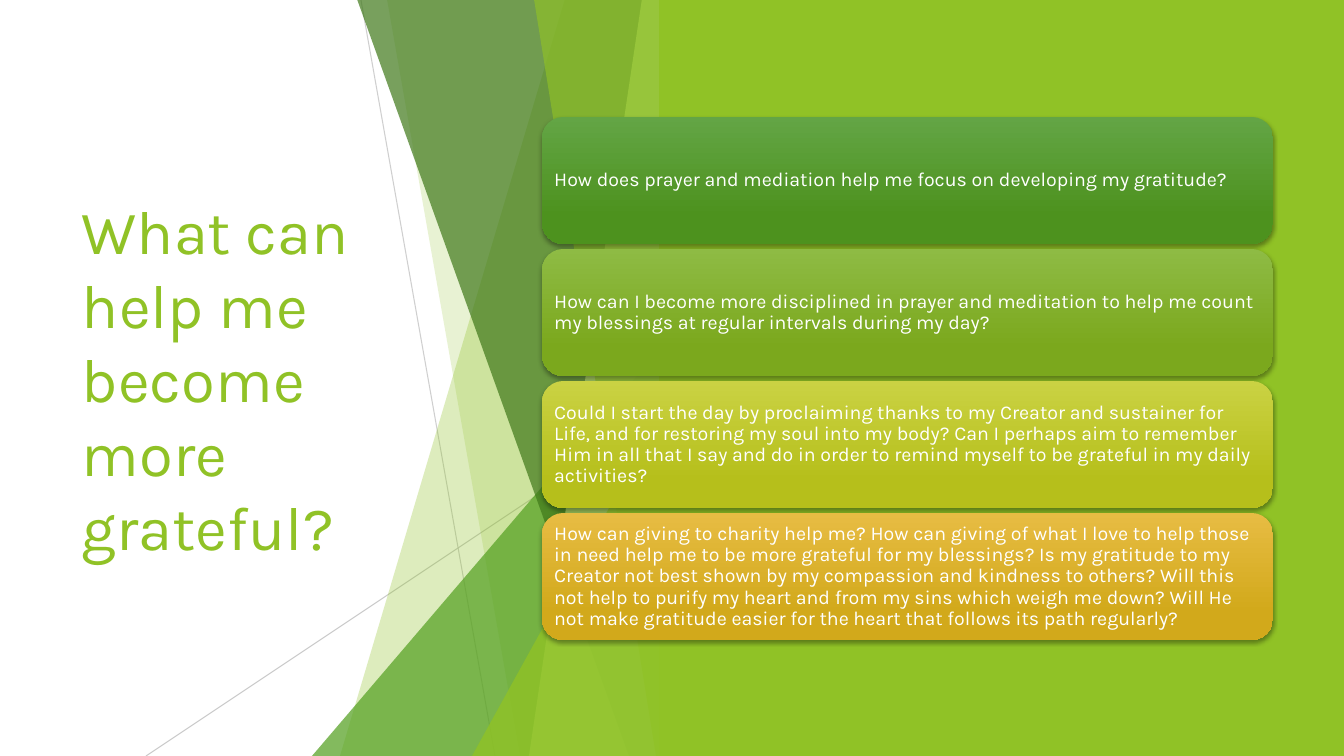
from dataclasses import dataclass
from typing import Any

from lxml.etree import SubElement
from pptx import Presentation
from pptx.dml.color import RGBColor
from pptx.enum.shapes import MSO_CONNECTOR as CONN, MSO_SHAPE as SHAPE
from pptx.enum.text import MSO_ANCHOR as ANCHOR, PP_ALIGN as ALIGN
from pptx.oxml.ns import qn
from pptx.util import Pt

WIDTH, HEIGHT = 1344, 756
SCALE = 12192000 / WIDTH
FACET_TOP, FACET_RIGHT = -1, 671
LIME, WHITE, GREY = "90C226", "FFFFFF", "BFBFBF"
FONT = "Karla"


@dataclass
class Ray:
    x1: int
    y1: int
    x2: int
    y2: int
    opacity: int


@dataclass
class Facet:
    """A band whose left edge slants from top_x to bottom_x."""
    top_x: int
    bottom_x: int
    color: str
    opacity: int


@dataclass
class Wedge:
    """A right triangle in the lower right corner of the facets."""
    left: int
    top: int
    color: str
    opacity: int


@dataclass
class Card:
    light: str
    dark: str
    text: str


RAYS = [Ray(361, 0, 495, HEIGHT, 75), Ray(FACET_RIGHT, 406, 146, HEIGHT, 80)]
LAYERS = [
    Facet(565, 340, LIME, 30),
    Facet(387, 520, LIME, 20),
    Wedge(312, 336, "54A021", 72),
    Facet(357, 629, "3F7819", 70),
    Facet(642, 529, "C0E474", 70),
    Facet(534, 656, LIME, 65),
    Wedge(472, 396, LIME, 80),
]
CARD_LEFT, CARD_TOP, CARD_WIDTH, CARD_HEIGHT, CARD_PITCH = 542, 117, 731, 127, 132
CARDS = [
    Card("63A545", "4D921E",
         "How does prayer and mediation help me focus on developing my gratitude?"),
    Card("8EBB44", "7BA81D",
         "How can I become more disciplined in prayer and meditation to help me count "
         "my blessings at regular intervals during my day?"),
    Card("CAD243", "B6BF1B",
         "Could I start the day by proclaiming thanks to my Creator and sustainer for "
         "Life, and for restoring my soul into my body? Can I perhaps aim to remember "
         "Him in all that I say and do in order to remind myself to be grateful in my "
         "daily activities?"),
    Card("E7BC43", "D2A91B",
         "How can giving to charity help me? How can giving of what I love to help those "
         "in need help me to be more grateful for my blessings? Is my gratitude to my "
         "Creator not best shown by my compassion and kindness to others? Will this "
         "not help to purify my heart and from my sins which weigh me down? Will He "
         "not make gratitude easier for the heart that follows its path regularly?"),
]


def px(*lengths: int) -> list[int]:
    return [round(n * SCALE) for n in lengths]


def rgb(color: str) -> RGBColor:
    return RGBColor.from_string(color)


def set_opacity(sp: Any, percent: int) -> None:
    color = sp._element.spPr.find(".//" + qn("a:srgbClr"))
    SubElement(color, qn("a:alpha"), val=str(percent * 1000))


def paint(sp: Any, color: str, opacity: int = 100) -> None:
    sp.shadow.inherit = False
    sp.line.fill.background()
    sp.fill.solid()
    sp.fill.fore_color.rgb = rgb(color)
    if opacity < 100:
        set_opacity(sp, opacity)


def write(sp: Any, text: str, size: int, color: str, spacing: float, **frame: Any) -> None:
    tf = sp.text_frame
    frame_format = {"word_wrap": True, "vertical_anchor": ANCHOR.MIDDLE, **frame}
    for name, value in frame_format.items():
        setattr(tf, name, value)
    p = tf.paragraphs[0]
    p.alignment, p.line_spacing = ALIGN.LEFT, spacing
    r = p.add_run()
    r.text = text
    for name, value in {"name": FONT, "size": Pt(size)}.items():
        setattr(r.font, name, value)
    r.font.color.rgb = rgb(color)


def draw_ray(shapes: Any, ray: Ray) -> None:
    line = shapes.add_connector(CONN.STRAIGHT, *px(ray.x1, ray.y1, ray.x2, ray.y2))
    line.line.width = Pt(0.75)
    line.line.color.rgb = rgb(GREY)
    set_opacity(line, ray.opacity)
    SubElement(line._element.spPr, qn("a:effectLst"))


def draw_layer(shapes: Any, layer: Facet | Wedge) -> None:
    if isinstance(layer, Facet):
        outline = shapes.build_freeform(layer.top_x, FACET_TOP, scale=SCALE)
        outline.add_line_segments([(FACET_RIGHT, FACET_TOP), (FACET_RIGHT, HEIGHT),
                                   (layer.bottom_x, HEIGHT)], close=True)
        sp = outline.convert_to_shape()
    else:
        sp = shapes.add_shape(SHAPE.ISOSCELES_TRIANGLE, *px(
            layer.left, layer.top, FACET_RIGHT - layer.left, HEIGHT - layer.top))
        sp.adjustments[0] = 1
    paint(sp, layer.color, layer.opacity)


def draw_card(shapes: Any, card: Card, top: int) -> None:
    sp = shapes.add_shape(SHAPE.ROUNDED_RECTANGLE,
                          *px(CARD_LEFT, top, CARD_WIDTH, CARD_HEIGHT))
    sp.line.fill.background()
    sp.fill.gradient()
    sp.fill.gradient_angle = 270
    stops = zip(sp.fill.gradient_stops, (0, 0.78), (card.light, card.dark))
    for stop, position, color in stops:
        stop.position = position
        stop.color.rgb = rgb(color)
    sp.shadow.inherit = False
    effects = sp._element.spPr.find(qn("a:effectLst"))
    shadow = SubElement(effects, qn("a:outerShdw"), blurRad=str(Pt(3)), dist=str(Pt(2)),
                        dir="5400000", algn="ctr", rotWithShape="0")
    black = SubElement(shadow, qn("a:srgbClr"), val="000000")
    SubElement(black, qn("a:alpha"), val="35000")
    inset = px(6)[0]
    margins = {f"margin_{side}": inset for side in ("left", "top", "right", "bottom")}
    write(sp, card.text, 14, WHITE, 0.9, **margins)


def main() -> None:
    prs = Presentation()
    prs.slide_width, prs.slide_height = px(WIDTH, HEIGHT)
    shapes = prs.slides.add_slide(prs.slide_layouts[6]).shapes

    title = shapes.add_textbox(*px(72, 152, 391, 452))
    write(title, "What can help me become more grateful?", 44, LIME, 1.0)

    backdrop = shapes.add_group_shape().shapes
    for ray in RAYS:
        draw_ray(backdrop, ray)
    for layer in LAYERS:
        draw_layer(backdrop, layer)

    panel = shapes.add_shape(SHAPE.RECTANGLE, *px(659, 0, WIDTH - 659, HEIGHT))
    paint(panel, LIME)
    for i, card in enumerate(CARDS):
        draw_card(shapes, card, CARD_TOP + i * CARD_PITCH)

    prs.save("out.pptx")


if __name__ == "__main__":
    main()
